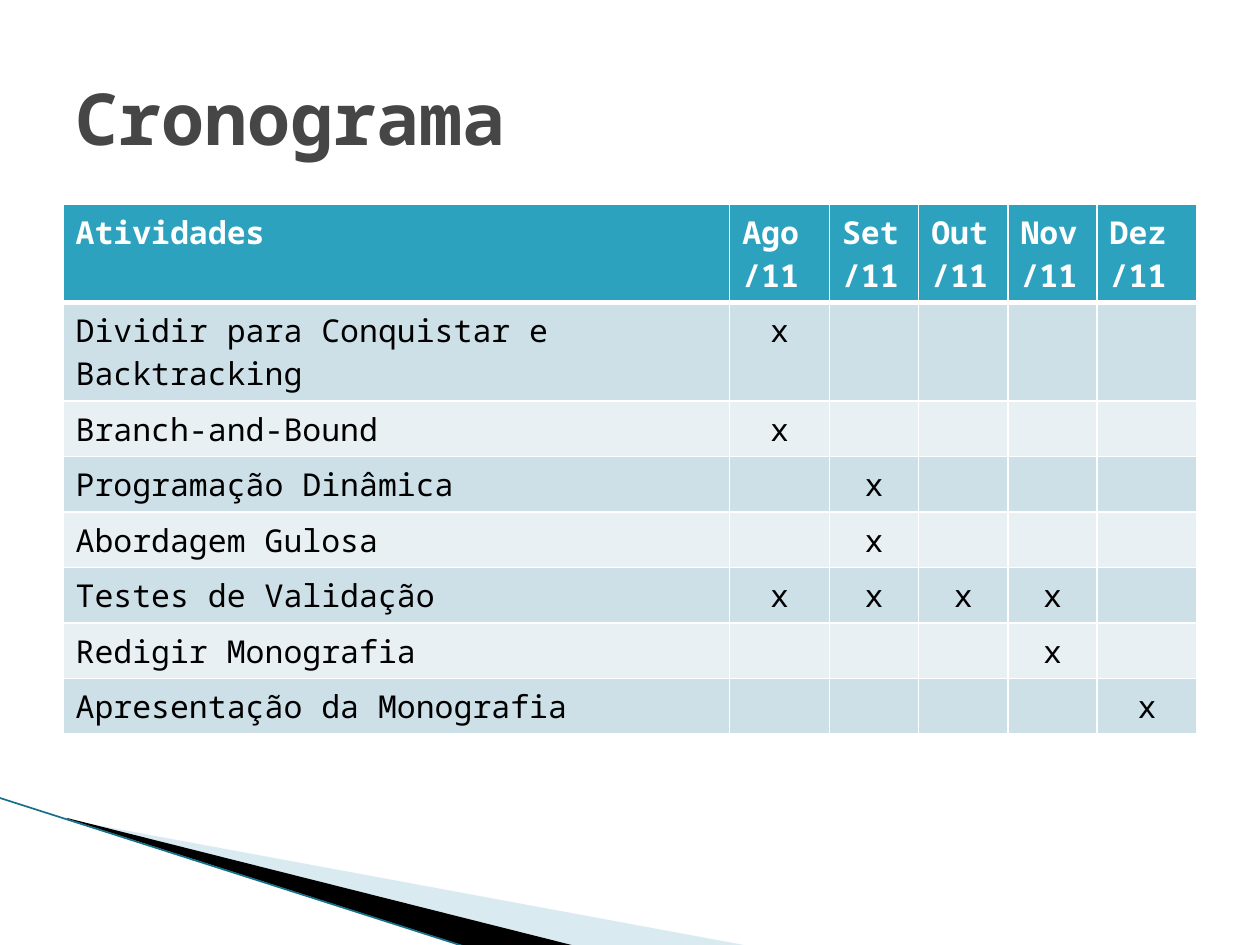
from lxml import etree
from pptx import Presentation
from pptx.dml.color import RGBColor
from pptx.enum.shapes import MSO_CONNECTOR
from pptx.enum.text import MSO_ANCHOR, PP_ALIGN
from pptx.oxml import parse_xml
from pptx.oxml.ns import nsdecls, qn
from pptx.util import Pt

LEFT, CENTER = PP_ALIGN.LEFT, PP_ALIGN.CENTER
MIDDLE = MSO_ANCHOR.MIDDLE
STRAIGHT = MSO_CONNECTOR.STRAIGHT

FONT = "Noto Sans Mono"
COLORS = {
    "title": "464646", "header": "2DA2BF", "white": "FFFFFF", "black": "000000",
    "odd": "CDE0E8", "even": "E8F0F4", "pale": "A0CBDC", "line": "16708A",
}
MONTHS = ["Ago/11", "Set/11", "Out/11", "Nov/11", "Dez/11"]
SCHEDULE = [
    ("Dividir para Conquistar e Backtracking", ["Ago/11"]),
    ("Branch-and-Bound", ["Ago/11"]),
    ("Programação Dinâmica", ["Set/11"]),
    ("Abordagem Gulosa", ["Set/11"]),
    ("Testes de Validação", MONTHS[:4]),
    ("Redigir Monografia", ["Nov/11"]),
    ("Apresentação da Monografia", ["Dez/11"]),
]
COLUMN_WIDTHS = [381, 57, 51, 51, 51, 57]


def format_text(paragraph, alignment, size, color, bold):
    paragraph.alignment = alignment
    values = {"name": FONT, "size": Pt(size), "bold": bold}
    for name, value in values.items():
        setattr(paragraph.font, name, value)
    paragraph.font.color.rgb = RGBColor.from_string(COLORS[color])


def add_border(cell, side, width):
    """Append a white border; call in the order L, R, T, B, before the fill."""
    cell._tc.get_or_add_tcPr().append(parse_xml(
        f'<a:ln{side} {nsdecls("a")} w="{Pt(width)}"><a:solidFill>'
        f'<a:srgbClr val="{COLORS["white"]}"/></a:solidFill></a:ln{side}>'))


presentation = Presentation()
presentation.slide_width, presentation.slide_height = Pt(720), Pt(540)
slide = presentation.slides.add_slide(presentation.slide_layouts[5])

# Corner wedges
wedges = [
    ("pale", [(39.6, 468.6), (428.4, 540.6), (328.3, 540.6), (39.6, 468)]),
    ("black", [(38.2, 467.4), (329, 540.6), (267.8, 541.3), (38.9, 468)]),
]
for color, points in wedges:
    corners = [(Pt(x), Pt(y)) for x, y in points]
    builder = slide.shapes.build_freeform(*corners[0])
    builder.add_line_segments(corners[1:])
    wedge = builder.convert_to_shape()
    wedge.shadow.inherit = False
    wedge.fill.solid()
    wedge.fill.fore_color.rgb = RGBColor.from_string(COLORS[color])
    wedge.line.fill.background()
    if color == "pale":
        fill_color = wedge._element.spPr.find(".//" + qn("a:srgbClr"))
        etree.SubElement(fill_color, qn("a:alpha"), val="40000")

edge = slide.shapes.add_connector(STRAIGHT, Pt(-0.7), Pt(455.8), Pt(267.1), Pt(541.4))
edge.line.width = Pt(0.95)
edge.line.color.rgb = RGBColor.from_string(COLORS["line"])
etree.SubElement(edge._element.spPr, qn("a:effectLst"))

# Title
title = slide.shapes.title
title.left, title.top, title.width, title.height = Pt(36), Pt(21.6), Pt(648), Pt(90)
title.text_frame.text = "Cronograma"
title.text_frame.vertical_anchor = MIDDLE
format_text(title.text_frame.paragraphs[0], LEFT, 41, "title", True)

# Schedule table
rows = [["Atividades", *MONTHS]]
for activity, active_months in SCHEDULE:
    rows.append([activity] + ["x" if month in active_months else "" for month in MONTHS])

row_height = 29.2
table = slide.shapes.add_table(len(rows), len(COLUMN_WIDTHS), Pt(36), Pt(116.8),
                               Pt(648), Pt(row_height * len(rows))).table
for column, width in zip(table.columns, COLUMN_WIDTHS):
    column.width = Pt(width)

for row_index, row in enumerate(rows):
    table.rows[row_index].height = Pt(row_height)
    is_header = row_index == 0
    fill = "header" if is_header else "odd" if row_index % 2 else "even"
    border_widths = {"L": 1, "R": 1, "T": 3 if row_index == 1 else 1, "B": 3 if is_header else 1}
    for column_index, text in enumerate(row):
        cell = table.cell(row_index, column_index)
        for side, width in border_widths.items():
            add_border(cell, side, width)
        cell.fill.solid()
        cell.fill.fore_color.rgb = RGBColor.from_string(COLORS[fill])
        cell.text = text
        alignment = LEFT if is_header or column_index == 0 else CENTER
        format_text(cell.text_frame.paragraphs[0], alignment, 18,
                    "white" if is_header else "black", is_header)

presentation.save("out.pptx")
